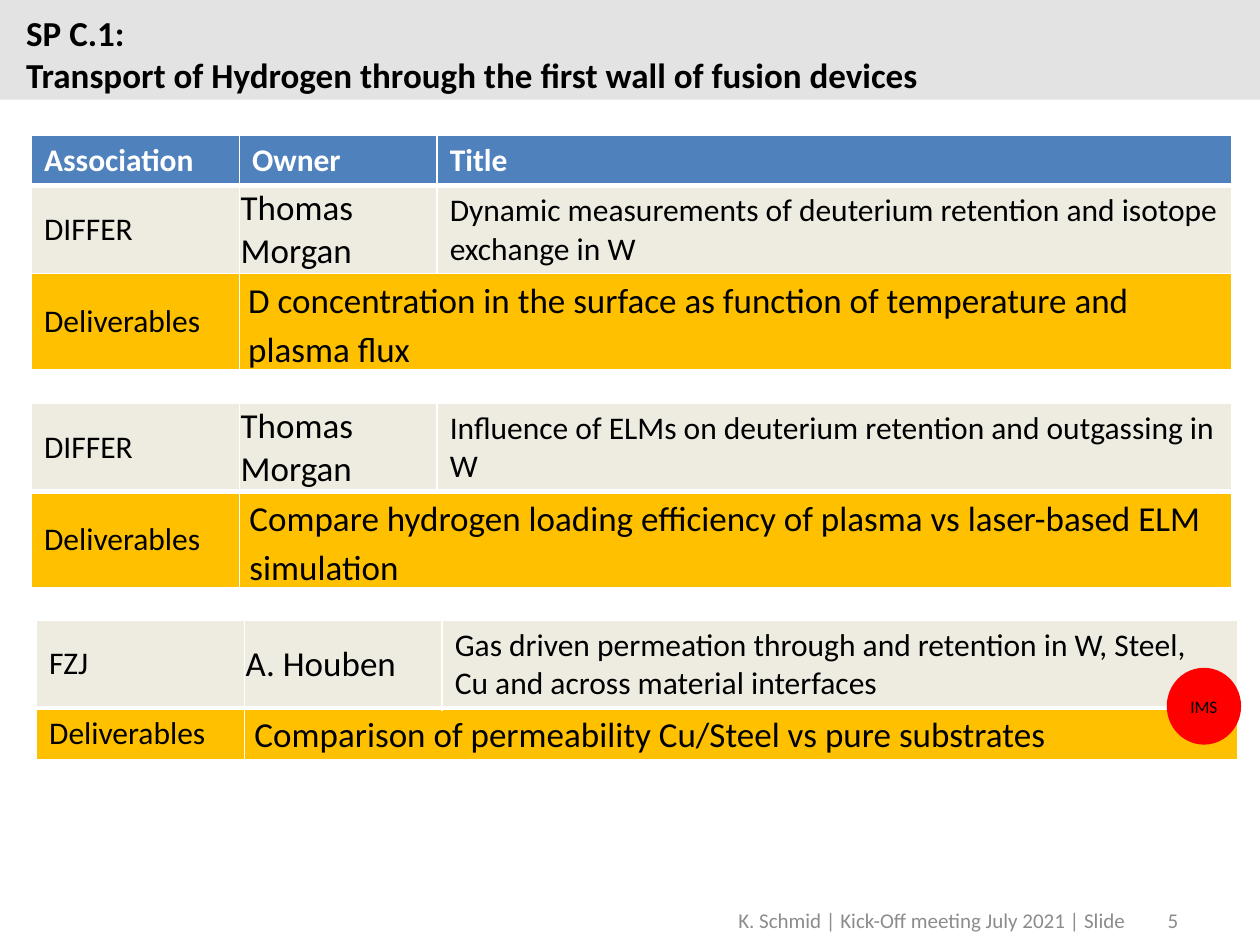
from lxml.etree import SubElement
from pptx import Presentation
from pptx.dml.color import RGBColor
from pptx.enum.shapes import MSO_SHAPE as Shape
from pptx.enum.text import MSO_ANCHOR as Anchor, PP_ALIGN as Align
from pptx.oxml.ns import qn
from pptx.util import Inches, Pt

FONT = "Calibri"
BLACK, WHITE, GREY = "000000", "FFFFFF", "8C8C8C"
BLUE, BEIGE, AMBER = "4F81BD", "EEECE1", "FFC000"
COLUMNS = (1.65, 1.57, 6.31)
HEADER_H, ENTRY_H = 0.4, 0.69
THIN, THICK = 1, 3


def rgb(value):
    return RGBColor.from_string(value)


def add_run(p, text, size, color=BLACK, bold=False):
    r = p.add_run()
    r.text = text
    r.font.name, r.font.size, r.font.bold = FONT, Pt(size), bold
    r.font.color.rgb = rgb(color)


def add_text(slide, box, lines, size, color=BLACK, bold=False,
             align=Align.LEFT, anchor=Anchor.TOP):
    tf = slide.shapes.add_textbox(*map(Inches, box)).text_frame
    tf.word_wrap = True
    tf.vertical_anchor = anchor
    for i, line in enumerate(lines):
        p = tf.add_paragraph() if i else tf.paragraphs[0]
        p.alignment = align
        add_run(p, line, size, color, bold)


def add_filled_shape(slide, kind, box, fill):
    s = slide.shapes.add_shape(kind, *map(Inches, box))
    s.shadow.inherit = False
    s.fill.solid()
    s.fill.fore_color.rgb = rgb(fill)
    s.line.fill.background()
    return s


def set_borders(cell, top, bottom):
    """Draw white cell edges, with the given top and bottom widths in points."""
    tc_pr = cell._tc.get_or_add_tcPr()
    for side, width in (("L", THIN), ("R", THIN), ("T", top), ("B", bottom)):
        ln = SubElement(tc_pr, qn(f"a:ln{side}"), w=str(Pt(width)))
        SubElement(SubElement(ln, qn("a:solidFill")), qn("a:srgbClr"), val=WHITE)


def set_margins(cell, left, top, right, bottom):
    cell.margin_left, cell.margin_top = Inches(left), Inches(top)
    cell.margin_right, cell.margin_bottom = Inches(right), Inches(bottom)


def fill_row(table, row, texts, fill, color=BLACK, bold=False, anchor=Anchor.MIDDLE):
    """Format a whole row at 18 pt; text that is None is left out."""
    for col, text in enumerate(texts):
        cell = table.cell(row, col)
        set_borders(cell, THICK if row == 1 else THIN, THICK if row == 0 else THIN)
        cell.fill.solid()
        cell.fill.fore_color.rgb = rgb(fill)
        cell.vertical_anchor = anchor
        if text:
            add_run(cell.text_frame.paragraphs[0], text, 18, color, bold)


def fill_entry(table, row, association, owner, title):
    fill_row(table, row, (association, None, title), BEIGE)
    cell = table.cell(row, 1)
    set_margins(cell, 0.01, 0.01, 0.01, 0)
    add_run(cell.text_frame.paragraphs[0], owner, 20)


def fill_deliverable(table, row, text, indent):
    fill_row(table, row, ("Deliverables", None, None), AMBER)
    cell = table.cell(row, 1)
    cell.merge(table.cell(row, 2))
    cell.vertical_anchor = Anchor.TOP
    set_margins(cell, 0.07, 0, 0.07, 0)
    p = cell.text_frame.paragraphs[0]
    p._p.get_or_add_pPr().set("marL", str(Inches(indent)))
    p.line_spacing = 1.15
    p.space_before = p.space_after = Pt(2.4)
    add_run(p, text, 20)


def add_project(slide, left, top, entry, deliverable, deliverable_h, header=None):
    heights = ([HEADER_H] if header else []) + [ENTRY_H, deliverable_h]
    size = map(Inches, (left, top, sum(COLUMNS), sum(heights)))
    table = slide.shapes.add_table(len(heights), len(COLUMNS), *size).table
    table.first_row = table.horz_banding = False
    for column, width in zip(table.columns, COLUMNS):
        column.width = Inches(width)
    for row, height in zip(table.rows, heights):
        row.height = Inches(height)
    if header:
        fill_row(table, 0, header, BLUE, WHITE, True, Anchor.TOP)
    last = len(heights) - 1
    fill_entry(table, last - 1, *entry)
    fill_deliverable(table, last, deliverable, 0 if header else 0.01)


def add_badge(slide, box, text):
    tf = add_filled_shape(slide, Shape.OVAL, box, "FF0000").text_frame
    tf.vertical_anchor = Anchor.MIDDLE
    p = tf.paragraphs[0]
    p.alignment = Align.CENTER
    add_run(p, text, 10)


def main():
    prs = Presentation()
    prs.slide_width, prs.slide_height = Inches(10), Inches(7.5)
    slide = prs.slides.add_slide(prs.slide_layouts[6])

    add_filled_shape(slide, Shape.RECTANGLE, (0, 0, 10, 0.79), "E3E3E3")
    add_text(slide, (0.11, 0.04, 8.83, 0.77),
             ("SP C.1:", "Transport of Hydrogen through the first wall of fusion devices"),
             20, bold=True)
    add_text(slide, (5.31, 7.1, 4.21, 0.4),
             ("K. Schmid | Kick-Off meeting July 2021 | Slide ",),
             12, GREY, align=Align.CENTER, anchor=Anchor.MIDDLE)
    add_text(slide, (7.2, 7.1, 2.25, 0.4), ("5",),
             12, GREY, align=Align.RIGHT, anchor=Anchor.MIDDLE)

    add_project(slide, 0.25, 1.07,
                ("DIFFER", "Thomas Morgan",
                 "Dynamic measurements of deuterium retention and isotope exchange in W"),
                "D concentration in the surface as function of temperature and plasma flux",
                0.75, header=("Association", "Owner", "Title"))
    add_project(slide, 0.25, 3.2,
                ("DIFFER", "Thomas Morgan",
                 "Influence of ELMs on deuterium retention and outgassing in W"),
                "Compare hydrogen loading efficiency of plasma vs laser-based ELM simulation",
                0.75)
    add_project(slide, 0.29, 4.92,
                ("FZJ", "A. Houben",
                 "Gas driven permeation through and retention in W, Steel, "
                 "Cu and across material interfaces"),
                "Comparison of permeability Cu/Steel vs pure substrates", 0.41)
    add_badge(slide, (9.26, 5.3, 0.59, 0.61), "IMS")

    prs.save("out.pptx")


if __name__ == "__main__":
    main()
